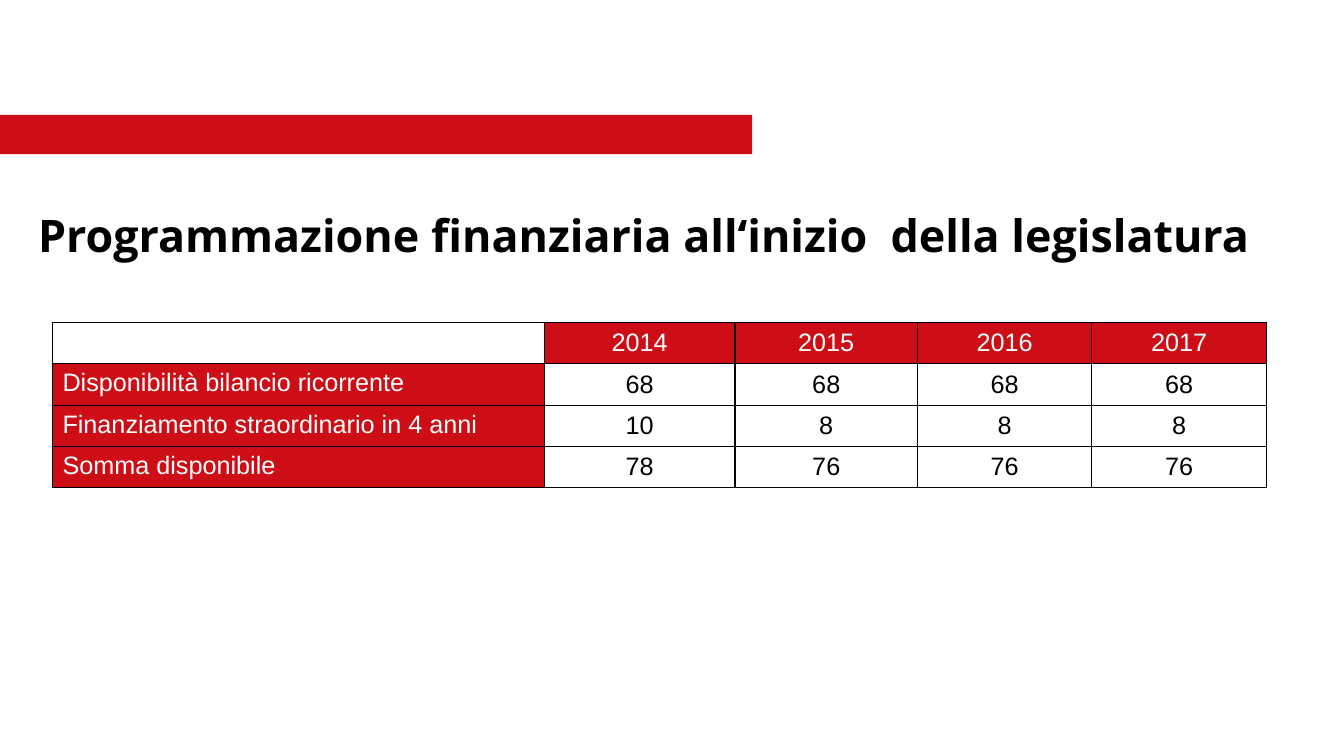
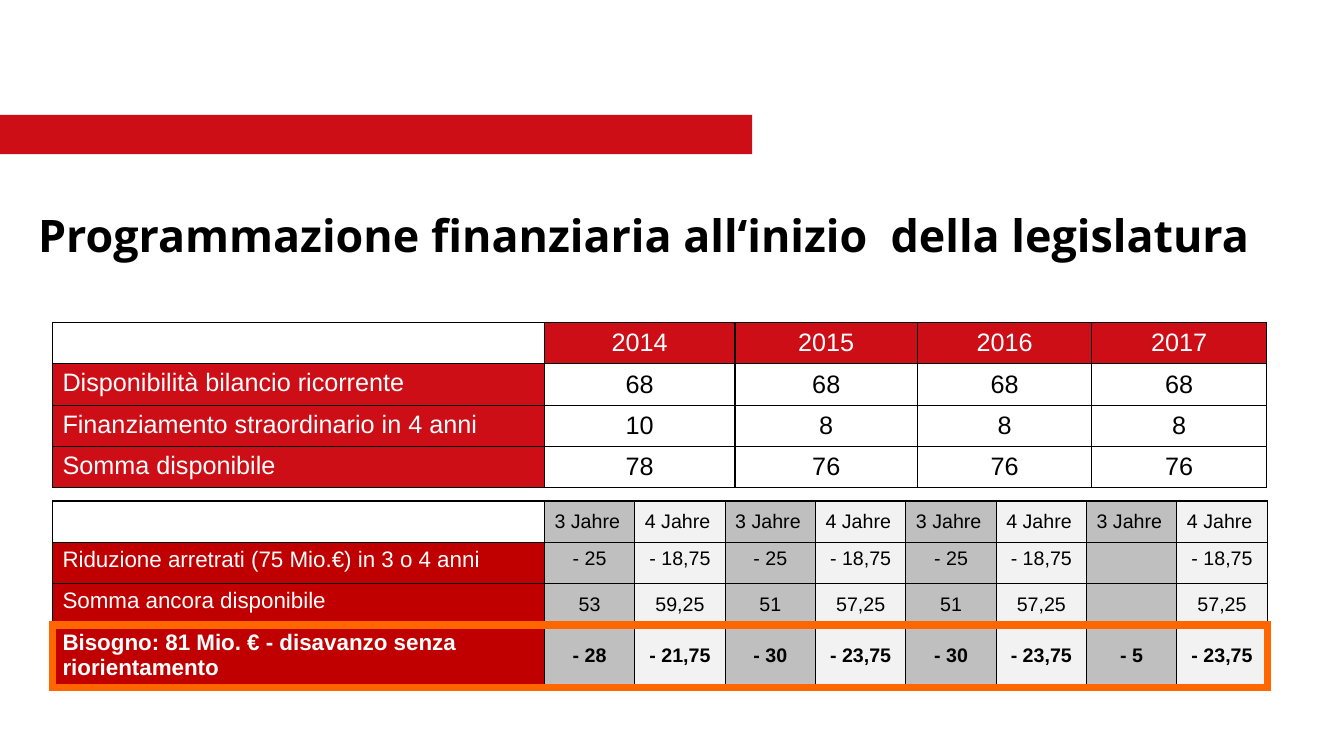
import pptx
import pptx.util
import pptx.dml.color
import pptx.enum.shapes
import pptx.enum.text
import pptx.oxml
import pptx.oxml.ns

Inches = pptx.util.Inches
ALIGN = pptx.enum.text.PP_ALIGN
ANCHOR = pptx.enum.text.MSO_ANCHOR

RED, DARK, ORANGE = "CD0E16", "C00000", "FF6600"
BLACK, WHITE = "000000", "FFFFFF"
GREYS = ["BFBFBF", "F2F2F2"]
TITLE = "Programmazione finanziaria all‘inizio  della legislatura "
LEFT, WIDE, LABEL = 0.52, 12.05, 4.88

FUNDS = [
    ["", "2014", "2015", "2016", "2017"],
    ["Disponibilità bilancio ricorrente", "68", "68", "68", "68"],
    ["Finanziamento straordinario in 4 anni", "10", "8", "8", "8"],
    ["Somma disponibile", "78", "76", "76", "76"],
]
NEEDS = [
    [""] + ["3 Jahre", "4 Jahre"] * 4,
    ["Riduzione arretrati (75 Mio.€) in 3 o 4 anni"]
    + ["- 25", "- 18,75"] * 3 + ["", "- 18,75"],
    ["Somma ancora disponibile", "53", "59,25"]
    + ["51", "57,25"] * 2 + ["", "57,25"],
    ["Bisogno: 81 Mio. € - disavanzo senza riorientamento", "- 28", "- 21,75"]
    + ["- 30", "- 23,75"] * 2 + ["- 5", "- 23,75"],
]


def color(code):
    """Turn a hex string into a colour."""
    return pptx.dml.color.RGBColor.from_string(code)


def write(frame, text, size=18, font="Arial", ink=BLACK, bold=False, align=ALIGN.LEFT):
    """Put one formatted paragraph into a text frame."""
    para = frame.paragraphs[0]
    para.alignment = align
    run = para.add_run()
    run.text = text
    run.font.size = pptx.util.Pt(size)
    run.font.name = font
    run.font.bold = bold
    run.font.color.rgb = color(ink)


def edge(cell, ink, width):
    """Draw the four borders of a table cell."""
    props = cell._tc.get_or_add_tcPr()
    for side in "LRTB":
        props.append(pptx.oxml.parse_xml(
            f'<a:ln{side} {pptx.oxml.ns.nsdecls("a")} w="{pptx.util.Pt(width)}">'
            f'<a:solidFill><a:srgbClr val="{ink}"/></a:solidFill></a:ln{side}>'))


def paint(cell, fill=None):
    """Fill a cell, or leave it clear."""
    if fill:
        cell.fill.solid()
        cell.fill.fore_color.rgb = color(fill)
    else:
        cell.fill.background()


def grid(slide, left, top, cols, rows, ink=BLACK, width=1):
    """Add a plain bordered table with the given column and row sizes."""
    table = slide.shapes.add_table(
        len(rows), len(cols), Inches(left), Inches(top),
        Inches(sum(cols)), Inches(sum(rows))).table
    table.first_row = table.horz_banding = False
    for col, size in zip(table.columns, cols):
        col.width = Inches(size)
    for row, size in zip(table.rows, rows):
        row.height = Inches(size)
    for cell in table.iter_cells():
        edge(cell, ink, width)
        paint(cell)
    return table


def funds(slide, left, top):
    """Add the table of yearly funds."""
    table = grid(slide, left, top, [LABEL, 1.89, 1.81, 1.73, 1.73], [0.41] * 4)
    for r, line in enumerate(FUNDS):
        for c, text in enumerate(line):
            if not text:
                continue
            cell = table.cell(r, c)
            head = r == 0 or c == 0
            paint(cell, RED if head else None)
            cell.vertical_anchor = ANCHOR.MIDDLE if c else ANCHOR.TOP
            write(cell.text_frame, text, ink=WHITE if head else BLACK,
                  align=ALIGN.CENTER if c else ALIGN.LEFT)


def needs(slide, left, top):
    """Add the table of needs with its last row framed."""
    rows = [0.41, 0.41, 0.41, 0.62]
    each = (WIDE - LABEL) / 8
    table = grid(slide, left, top, [LABEL] + [each] * 8, rows)
    for r, line in enumerate(NEEDS):
        for c, text in enumerate(line):
            cell = table.cell(r, c)
            if c:
                paint(cell, GREYS[(c - 1) % 2])
            elif r:
                paint(cell, DARK)
            cell.vertical_anchor = ANCHOR.MIDDLE if c and r != 1 else ANCHOR.TOP
            if text:
                write(cell.text_frame, text, size=14 if c else 16,
                      ink=BLACK if c else WHITE, bold=r == 3,
                      align=ALIGN.CENTER if c and r else ALIGN.LEFT)
    grid(slide, left, top + sum(rows[:3]), [WIDE], rows[3:], ORANGE, 6)


def start(deck):
    """Add a slide with the red band and the title."""
    slide = deck.slides.add_slide(deck.slide_layouts[5])
    band = slide.shapes.add_shape(
        pptx.enum.shapes.MSO_SHAPE.RECTANGLE, 0, Inches(1.14), Inches(7.46), Inches(0.39))
    band.shadow.inherit = False
    band.fill.solid()
    band.fill.fore_color.rgb = color(RED)
    band.line.fill.background()
    title = slide.shapes.title
    title.left, title.top = Inches(0.21), Inches(2.01)
    title.width, title.height = Inches(12.48), Inches(0.63)
    title.text_frame.vertical_anchor = ANCHOR.MIDDLE
    write(title.text_frame, TITLE, size=32, font="Open Sans", bold=True, align=ALIGN.CENTER)
    return slide


def main():
    """Build and save the deck."""
    deck = pptx.Presentation()
    deck.slide_width, deck.slide_height = Inches(13.33), Inches(7.5)
    for full in (False, True):
        slide = start(deck)
        funds(slide, LEFT, 3.2)
        if full:
            needs(slide, LEFT, 4.97)
    deck.save("out.pptx")


if __name__ == "__main__":
    main()
